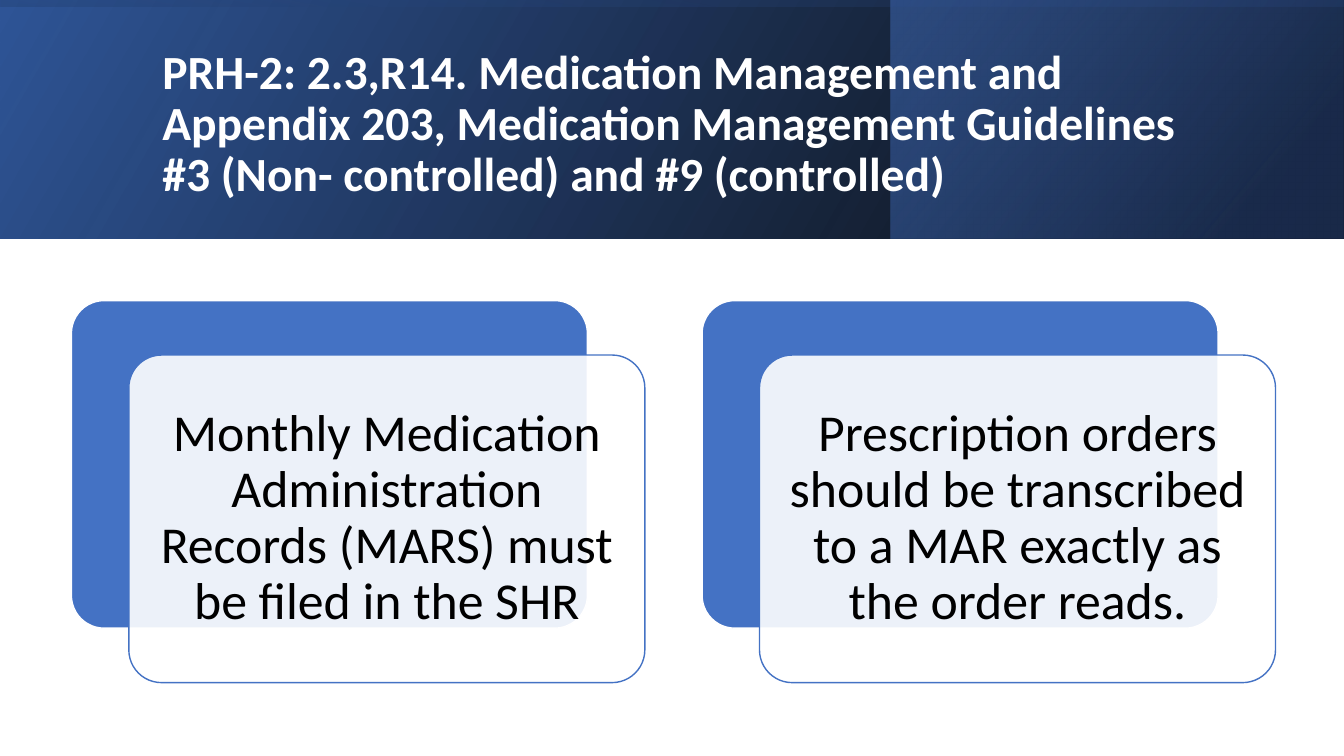
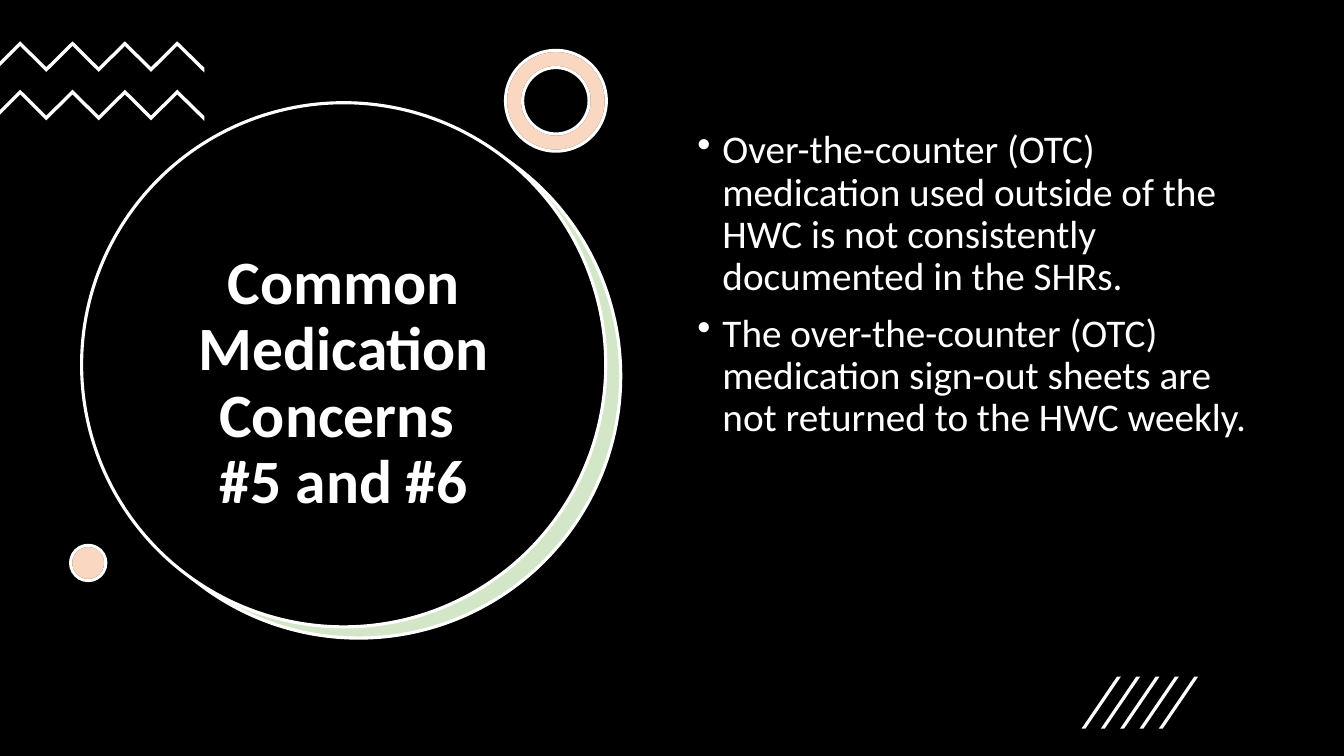
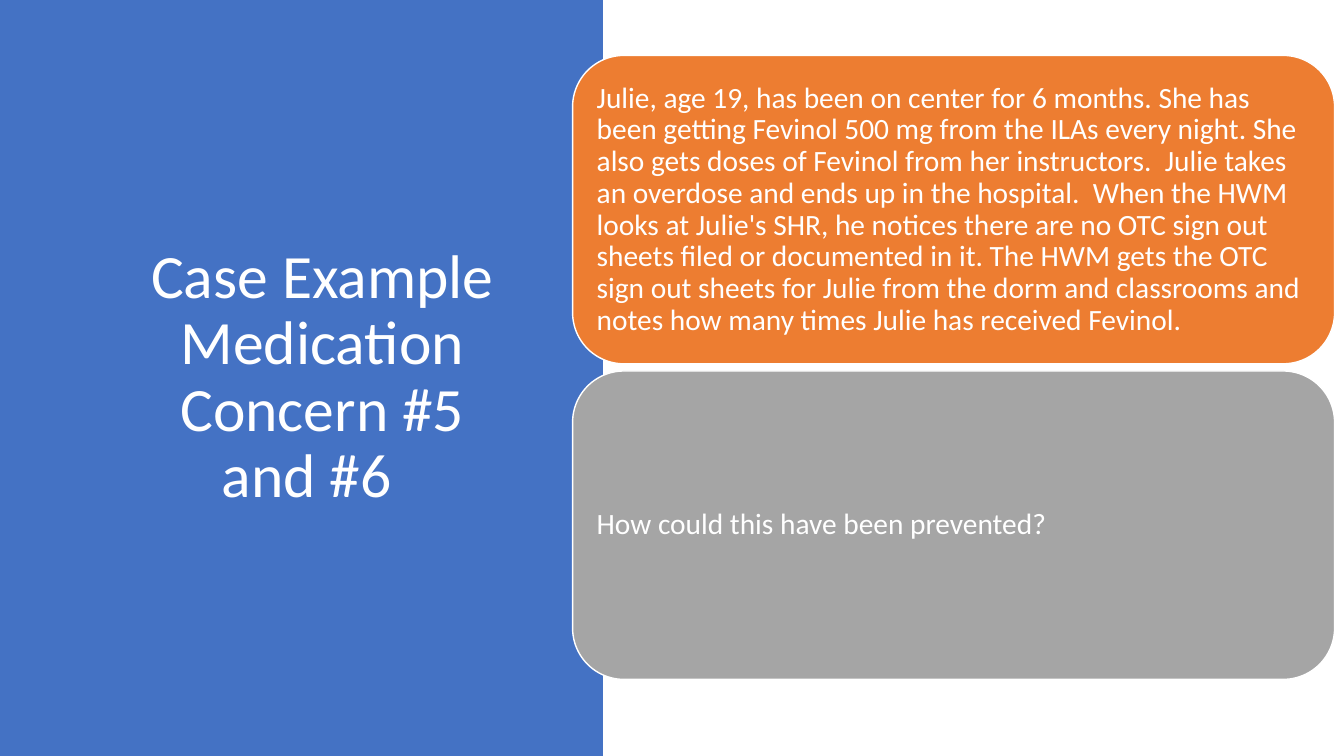
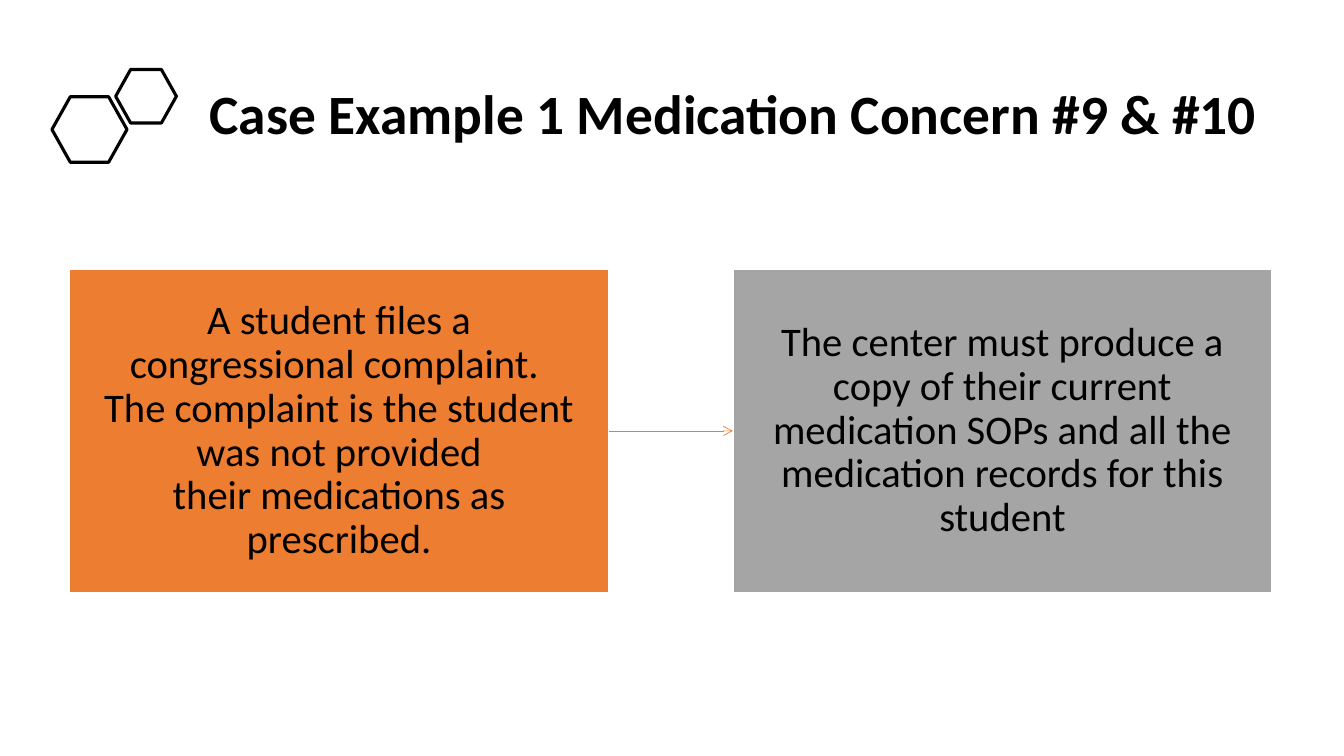
from lxml import etree
from pptx import Presentation
from pptx.dml.color import RGBColor
from pptx.enum import shapes, text
from pptx.oxml.ns import qn
from pptx.util import Pt

GEO = shapes.MSO_SHAPE
WHITE, BLACK = "FFFFFF", "000000"
BLUE, ORANGE, GRAY, GREEN = "4472C4", "ED7D31", "A5A5A5", "70AD47"


def color(code):
    return RGBColor.from_string(code)


def fade(shape, *alphas):
    """Set the opacity, in percent, of the fill colours in turn."""
    codes = list(shape._element.spPr.iter(qn("a:srgbClr")))
    for code, alpha in zip(codes, alphas):
        etree.SubElement(code, qn("a:alpha")).set("val", str(alpha * 1000))


def write(shape, *lines, size=44, ink=WHITE, bold=False, center=False,
          inset=(7.2, 3.6), middle=True, bullet=False, before=0):
    """Fill a shape with paragraphs; ~ stands for a non-breaking space."""
    frame = shape.text_frame
    frame.word_wrap = True
    frame.margin_left = frame.margin_right = Pt(inset[0])
    frame.margin_top = frame.margin_bottom = Pt(inset[1])
    frame.vertical_anchor = (text.MSO_ANCHOR.MIDDLE if middle
                             else text.MSO_ANCHOR.TOP)
    for i, line in enumerate(lines):
        para = frame.add_paragraph() if i else frame.paragraphs[0]
        para.text = line.replace("~", chr(160))
        para.alignment = text.PP_ALIGN.CENTER if center else text.PP_ALIGN.LEFT
        para.line_spacing = 0.9
        para.space_before = Pt(before)
        if bullet:
            props = para._p.get_or_add_pPr()
            props.set("marL", str(Pt(18)))
            props.set("indent", str(Pt(-18)))
            etree.SubElement(props, qn("a:buChar")).set("char", "•")
        for run in para.runs:
            font = run.font
            font.name, font.size, font.bold = Deck.face, Pt(size), bold
            font.color.rgb = color(ink)


class Deck:
    face = "Calibri"

    def __init__(self):
        self.prs = Presentation()
        self.prs.slide_width, self.prs.slide_height = Pt(960), Pt(540)
        self.slide = None

    def page(self, back=WHITE):
        self.slide = self.prs.slides.add_slide(self.prs.slide_layouts[6])
        fill = self.slide.background.fill
        fill.solid()
        fill.fore_color.rgb = color(back)

    def style(self, shape, fill=None, line=None, width=1, alpha=None):
        shape.shadow.inherit = False
        if fill:
            shape.fill.solid()
            shape.fill.fore_color.rgb = color(fill)
        else:
            shape.fill.background()
        if alpha:
            fade(shape, alpha)
        if line:
            shape.line.color.rgb = color(line)
            shape.line.width = Pt(width)
        else:
            shape.line.fill.background()
        return shape

    def shape(self, kind, x, y, w, h, adj=None, **look):
        item = self.slide.shapes.add_shape(kind, Pt(x), Pt(y), Pt(w), Pt(h))
        if adj is not None:
            item.adjustments[0] = adj
        return self.style(item, **look)

    def blend(self, x, y, w, h, stops, angle, turn=0):
        """A mirrored rectangle with a gradient of (place, colour, alpha)."""
        item = self.shape(GEO.RECTANGLE, x, y, w, h)
        item.fill.gradient()
        item.fill.gradient_angle = 360 - angle
        for stop, (place, code, _) in zip(item.fill.gradient_stops, stops):
            stop.position = place
            stop.color.rgb = color(code)
        fade(item, *[alpha for _, _, alpha in stops])
        item._element.spPr.find(qn("a:xfrm")).set("flipH", "1")
        item.rotation = turn

    def label(self, x, y, w, h, *lines, **form):
        box = self.slide.shapes.add_textbox(Pt(x), Pt(y), Pt(w), Pt(h))
        write(box, *lines, **form)

    def zigzag(self, y):
        top = [(0, 14.4)]
        top += [(14.4 + 18.7 * i, 18.5 * (i % 2)) for i in range(7)]
        top += [(146, 19)]
        dots = top + [(a, b + 3.4) for a, b in reversed(top)]
        dots = [(Pt(a), Pt(y + b)) for a, b in dots]
        form = self.slide.shapes.build_freeform(*dots[0])
        form.add_line_segments(dots[1:])
        self.style(form.convert_to_shape(), fill=WHITE)

    def arrow(self, start, end, ink):
        wire = self.slide.shapes.add_connector(
            shapes.MSO_CONNECTOR.STRAIGHT, 0, 0, 0, 0)
        wire.begin_connect(start, 3)
        wire.end_connect(end, 1)
        wire.line.color.rgb = color(ink)
        wire.line.width = Pt(0.5)
        etree.SubElement(wire.line._get_or_add_ln(),
                         qn("a:tailEnd")).set("type", "arrow")
        etree.SubElement(wire._element.spPr, qn("a:effectLst"))


def orders(deck):
    deck.page()
    # Header band
    high = 170.6
    deck.blend(0, 0, 960, high, [(0, BLACK, 96), (1, "2F5597", 100)], 330)
    deck.blend(636.5, 0, 323, high,
               [(0.19, "203864", 68), (1, BLUE, 48)], 320)
    deck.blend(480 - high / 2, high / 2 - 480, high, 960,
               [(0.23, "2F5597", 16), (0.99, BLACK, 45)], 350, turn=270)
    deck.label(109, 27.4, 765, 124,
               "PRH-2: 2.3,R14. Medication Management and Appendix 203, "
               "Medication Management Guidelines #3 (Non- controlled) "
               "and #9 (controlled)", size=34, bold=True)
    # Layered cards
    cards = ["Monthly Medication Administration Records (MARS) must be "
             "filed in the SHR",
             "Prescription orders should be transcribed to a MAR exactly "
             "as the order reads."]
    for i, words in enumerate(cards):
        x = 51 + 450.5 * i
        deck.shape(GEO.ROUNDED_RECTANGLE, x, 214.7, 368.6, 234, adj=0.1,
                   fill=BLUE, line=WHITE)
        card = deck.shape(GEO.ROUNDED_RECTANGLE, x + 41, 253.6, 368.6, 234,
                          adj=0.1, fill=WHITE, line=BLUE, alpha=90)
        write(card, words, size=37, ink=BLACK, center=True,
              inset=(10.8, 10.8))


def concerns(deck):
    deck.page(BLACK)
    # Large disc with a tinted edge
    disc = 374.4
    deck.shape(GEO.OVAL, 69.5, 82, disc, disc, fill=WHITE)
    deck.shape(GEO.OVAL, 69, 81.4, disc, disc, fill=GREEN, alpha=30,
               line=WHITE, width=2.25)
    deck.shape(GEO.OVAL, 58.3, 73.4, disc, disc, fill=BLACK,
               line=WHITE, width=2.25)
    deck.label(87, 147.6, 317.5, 253.4,
               "Common Medication Concerns \v#5 and #6",
               bold=True, center=True)
    # Ornaments
    for y in (29.5, 64.1):
        deck.zigzag(y)
    for kind, x, y, side, adj in ((GEO.DONUT, 361.1, 36, 72, 0.17),
                                  (GEO.OVAL, 50.4, 389.5, 25.2, None)):
        for look in (dict(fill=WHITE, line=BLACK),
                     dict(fill=ORANGE, alpha=30, line=WHITE)):
            deck.shape(kind, x, y, side, side, adj=adj, width=2.25, **look)
    for i in range(5):
        deck.shape(GEO.PARALLELOGRAM, 772.6 + 13.8 * i, 483.4, 28, 37,
                   adj=0.9, fill=WHITE)
    # Bullets
    deck.label(491, 89.3, 411, 342.7,
               "Over-the-counter (OTC) medication used outside of the HWC "
               "is not consistently documented in the SHRs.",
               "The over-the-counter (OTC) medication sign-out sheets are "
               "not returned to the HWC weekly.",
               size=28, middle=False, bullet=True, before=10)


def overdose(deck):
    deck.page()
    # Side panel
    deck.shape(GEO.RECTANGLE, 0, 0, 430.6, 540, fill=BLUE)
    deck.label(79.2, 50.4, 302.4, 439.2,
               "Case Example Medication Concern #5 and~#6\t", center=True)
    # Story and question
    story = ("Julie, age~19, has been on center for~6 months. She has "
             "been~getting~Fevinol 500 mg from the~ILAs every night. She "
             "also gets~doses of Fevinol from~her instructors.~~Julie takes "
             "an overdose and ends up~in the hospital.~ When the~HWM looks "
             "at Julie's SHR,~he notices there are no OTC sign out sheets "
             "filed or documented in it. The HWM gets the~OTC sign out "
             "sheets for Julie from the dorm and classrooms and notes how "
             "many times Julie has received Fevinol.")
    panels = [(story, ORANGE), ("How could this have been prevented?", GRAY)]
    for i, (words, fill) in enumerate(panels):
        panel = deck.shape(GEO.ROUNDED_RECTANGLE, 409, 39.6 + 225.4 * i,
                           544.3, 220.3, fill=fill, line=WHITE)
        write(panel, words, size=21, inset=(6.5, 6.5))


def complaint(deck):
    deck.page()
    # Title with hexagons
    deck.label(142.6, 41, 778.3, 84.2,
               "Case Example 1 Medication Concern #9 & #10",
               size=39.6, ink=BLACK, bold=True)
    for place in ((37.1, 69.1, 53.6, 46.8), (82.6, 49.7, 43.4, 38.2)):
        deck.shape(GEO.HEXAGON, *place, adj=0.28, line=BLACK, width=2.25)
    # Linked boxes
    steps = [("A student files a congressional complaint.~ The complaint is "
              "the student was not provided their~medications as "
              "prescribed.", ORANGE),
             ("The center must produce a copy of their current medication "
              "SOPs and all the medication records for this student", GRAY)]
    boxes = []
    for i, (words, fill) in enumerate(steps):
        box = deck.shape(GEO.RECTANGLE, 49.7 + 473.8 * i, 192.3, 385.2, 231,
                         fill=fill, line=WHITE)
        write(box, words, size=29, ink="010000", center=True,
              inset=(18.7, 20.2))
        boxes.append(box)
    deck.arrow(*boxes, ORANGE)


def main():
    deck = Deck()
    for build in (orders, concerns, overdose, complaint):
        build(deck)
    deck.prs.save("out.pptx")


if __name__ == "__main__":
    main()
